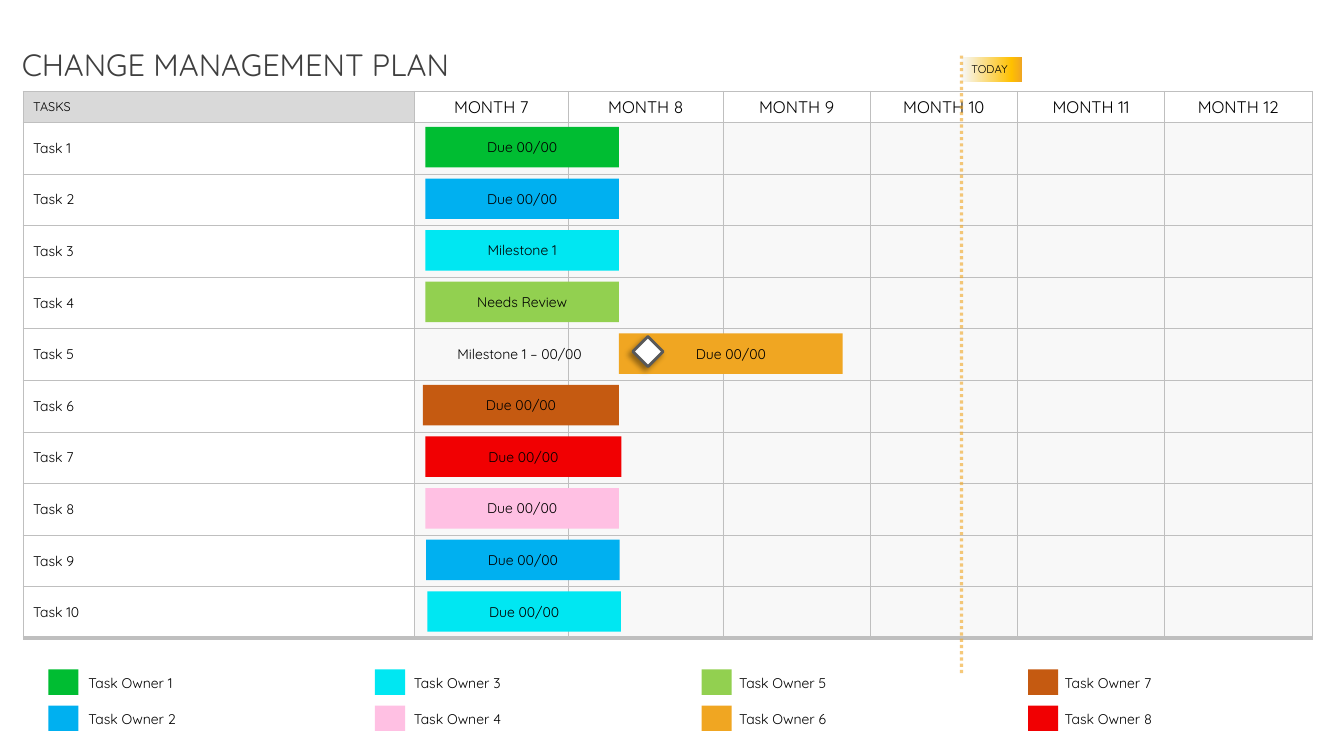
import copy
import lxml.etree
import pptx
import pptx.dml.color
import pptx.enum.dml
import pptx.enum.shapes
import pptx.enum.text
import pptx.oxml.ns
import pptx.util

Cm, Pt = pptx.util.Cm, pptx.util.Pt
qn = pptx.oxml.ns.qn
SHAPE = pptx.enum.shapes.MSO_SHAPE
ALIGN = pptx.enum.text.PP_ALIGN
MIDDLE = pptx.enum.text.MSO_ANCHOR.MIDDLE

TITLE = "CHANGE MANAGEMENT PLAN"
HEADERS = ["TASKS", "MONTH 7", "MONTH 8", "MONTH 9", "MONTH 10", "MONTH 11", "MONTH 12"]
COLORS = {
    "green": "00BD32", "blue": "00B0F0", "cyan": "00E7F2", "pink": "FFC0E3",
    "lime": "92D050", "amber": "F0A622", "brown": "C55A11", "red": "F10002",
    "white": "FFFFFF", "black": "000000", "title": "3F3F3F", "header": "D9D9D9",
    "grid": "BFBFBF", "cell": "F2F2F2", "outline": "595959",
    "pale": "F6F8FC", "gold": "FFC000",
}
# Task, bar label, colour, bar left and width in cm
TASKS = [
    ("Task 1", "Due 00/00", "green", 10.72, 4.88),
    ("Task 2", "Due 00/00", "blue", 10.72, 4.88),
    ("Task 3", "Milestone 1", "cyan", 10.72, 4.88),
    ("Task 4", "Needs Review", "lime", 10.72, 4.88),
    ("Task 5", "Due 00/00", "amber", 15.6, 5.64),
    ("Task 6", "Due 00/00", "brown", 10.66, 4.94),
    ("Task 7", "Due 00/00", "red", 10.72, 4.94),
    ("Task 8", "Due 00/00", "pink", 10.72, 4.88),
    ("Task 9", "Due 00/00", "blue", 10.74, 4.88),
    ("Task 10", "Due 00/00", "cyan", 10.77, 4.88),
]
OWNERS = [
    ("Task Owner 1", "green"), ("Task Owner 2", "blue"),
    ("Task Owner 3", "cyan"), ("Task Owner 4", "pink"),
    ("Task Owner 5", "lime"), ("Task Owner 6", "amber"),
    ("Task Owner 7", "brown"), ("Task Owner 8", "red"),
]
MILESTONE = "Milestone 1 – 00/00"
TODAY_GRADIENT = [(0, "pale"), (0.83, "gold"), (1, "amber")]

TABLE_LEFT, TABLE_TOP, HEADER_HEIGHT, ROW_HEIGHT = 0.58, 2.3, 0.78, 1.3
COLUMN_WIDTHS = [9.86, 3.89, 3.89, 3.71, 3.71, 3.71, 3.71]
BAR_TOP, BAR_HEIGHT = 3.2, 1.02
MILESTONE_TOP = BAR_TOP + 4 * ROW_HEIGHT
TODAY_LEFT = 24.23


def rgb(color):
    return pptx.dml.color.RGBColor.from_string(COLORS[color])


def fade(element, percent):
    """Make the colour inside a fill or line element partly transparent."""
    srgb = next(element.iter(qn("a:srgbClr")))
    lxml.etree.SubElement(srgb, qn("a:alpha"), val=str(percent * 1000))


def write(frame, text, size=10, color="black", align=ALIGN.LEFT, anchor=None):
    frame.word_wrap = True
    frame.vertical_anchor = anchor
    paragraph = frame.paragraphs[0]
    paragraph.alignment = align
    run = paragraph.add_run()
    run.text = text
    run.font.size = Pt(size)
    run.font.name = "Quicksand"
    run.font.color.rgb = rgb(color)


def add_text(left, top, width, height, text, **style):
    box = slide.shapes.add_textbox(Cm(left), Cm(top), Cm(width), Cm(height))
    write(box.text_frame, text, **style)


def add_block(shapes, left, top, width, height, color, kind=SHAPE.RECTANGLE):
    block = shapes.add_shape(kind, Cm(left), Cm(top), Cm(width), Cm(height))
    block.shadow.inherit = False
    block.fill.solid()
    block.fill.fore_color.rgb = rgb(color)
    block.line.fill.background()
    return block


def format_cell(cell, color, opacity, bottom_width):
    properties = cell._tc.get_or_add_tcPr()
    for side, width in (("L", 0.5), ("R", 0.5), ("T", 0.5), ("B", bottom_width)):
        border = lxml.etree.SubElement(properties, qn(f"a:ln{side}"), w=str(Pt(width)))
        solid = lxml.etree.SubElement(border, qn("a:solidFill"))
        lxml.etree.SubElement(solid, qn("a:srgbClr"), val=COLORS["grid"])
    cell.fill.solid()
    cell.fill.fore_color.rgb = rgb(color)
    if opacity < 100:
        fade(properties.find(qn("a:solidFill")), opacity)
    cell.vertical_anchor = MIDDLE


def add_plan_table():
    height = HEADER_HEIGHT + ROW_HEIGHT * len(TASKS)
    table = slide.shapes.add_table(
        len(TASKS) + 1, len(HEADERS), Cm(TABLE_LEFT), Cm(TABLE_TOP),
        Cm(sum(COLUMN_WIDTHS)), Cm(height)).table
    table.first_row = table.horz_banding = False
    for column, width in zip(table.columns, COLUMN_WIDTHS):
        column.width = Cm(width)
    for r, row in enumerate(table.rows):
        row.height = Cm(ROW_HEIGHT if r else HEADER_HEIGHT)
        for c, cell in enumerate(row.cells):
            if c == 0:
                color, opacity = ("white" if r else "header"), 100
            else:
                color, opacity = ("cell", 50) if r else ("white", 75)
            format_cell(cell, color, opacity, 3 if r == len(TASKS) else 0.5)
            if r == 0:
                write(cell.text_frame, HEADERS[c], size=12 if c else 9,
                      align=ALIGN.CENTER if c else ALIGN.LEFT)
            elif c == 0:
                write(cell.text_frame, TASKS[r - 1][0])


def add_today_marker():
    marker = slide.shapes.add_group_shape()
    flag = add_block(marker.shapes, TODAY_LEFT, 1.43, 1.52, 0.64, "gold")
    flag.fill.gradient()
    flag.fill.gradient_angle = 0
    stops = next(flag._element.iter(qn("a:gsLst")))
    stops.insert(1, copy.deepcopy(stops[0]))
    for stop, (position, color) in zip(flag.fill.gradient_stops, TODAY_GRADIENT):
        stop.position = position
        stop.color.rgb = rgb(color)
    write(flag.text_frame, "TODAY", size=8, anchor=MIDDLE)

    line = marker.shapes.add_connector(
        pptx.enum.shapes.MSO_CONNECTOR.STRAIGHT,
        Cm(TODAY_LEFT), Cm(1.4), Cm(TODAY_LEFT), Cm(16.97))
    line.line.color.rgb = rgb("amber")
    line.line.width = Pt(2.25)
    line.line.dash_style = pptx.enum.dml.MSO_LINE.ROUND_DOT
    properties = line._element.spPr
    fade(properties, 60)
    lxml.etree.SubElement(properties, qn("a:effectLst"))


def add_milestone():
    diamond = add_block(slide.shapes, 15.95, MILESTONE_TOP + 0.08, 0.76, 0.76,
                        "white", kind=SHAPE.DIAMOND)
    diamond.line.color.rgb = rgb("outline")
    diamond.line.width = Pt(2)
    effects = diamond._element.spPr.find(qn("a:effectLst"))
    shadow = lxml.etree.SubElement(
        effects, qn("a:outerShdw"), blurRad=str(Pt(4)), dist=str(Pt(3)),
        dir=str(135 * 60000), algn="tr", rotWithShape="0")
    lxml.etree.SubElement(shadow, qn("a:srgbClr"), val=COLORS["black"])
    fade(shadow, 40)
    add_text(10.8, MILESTONE_TOP, 4.11, BAR_HEIGHT, MILESTONE,
             align=ALIGN.RIGHT, anchor=MIDDLE)


presentation = pptx.Presentation()
presentation.slide_width, presentation.slide_height = Cm(33.87), Cm(19.05)
slide = presentation.slides.add_slide(presentation.slide_layouts[6])

add_plan_table()
for row, (_, label, color, left, width) in enumerate(TASKS):
    bar = add_block(slide.shapes, left, BAR_TOP + row * ROW_HEIGHT, width, BAR_HEIGHT, color)
    write(bar.text_frame, label, align=ALIGN.CENTER, anchor=MIDDLE)
for index, (owner, color) in enumerate(OWNERS):
    column, row = divmod(index, 2)
    top = 16.87 + row * 0.91
    add_block(slide.shapes, 1.22 + column * 8.23, top, 0.76, 0.64, color)
    add_text(1.98 + column * 8.2, top, 6.1, 0.68, owner)
add_today_marker()
add_milestone()
add_text(0.3, 1.04, 31.09, 1.19, TITLE, size=22, color="title")

presentation.save("out.pptx")
